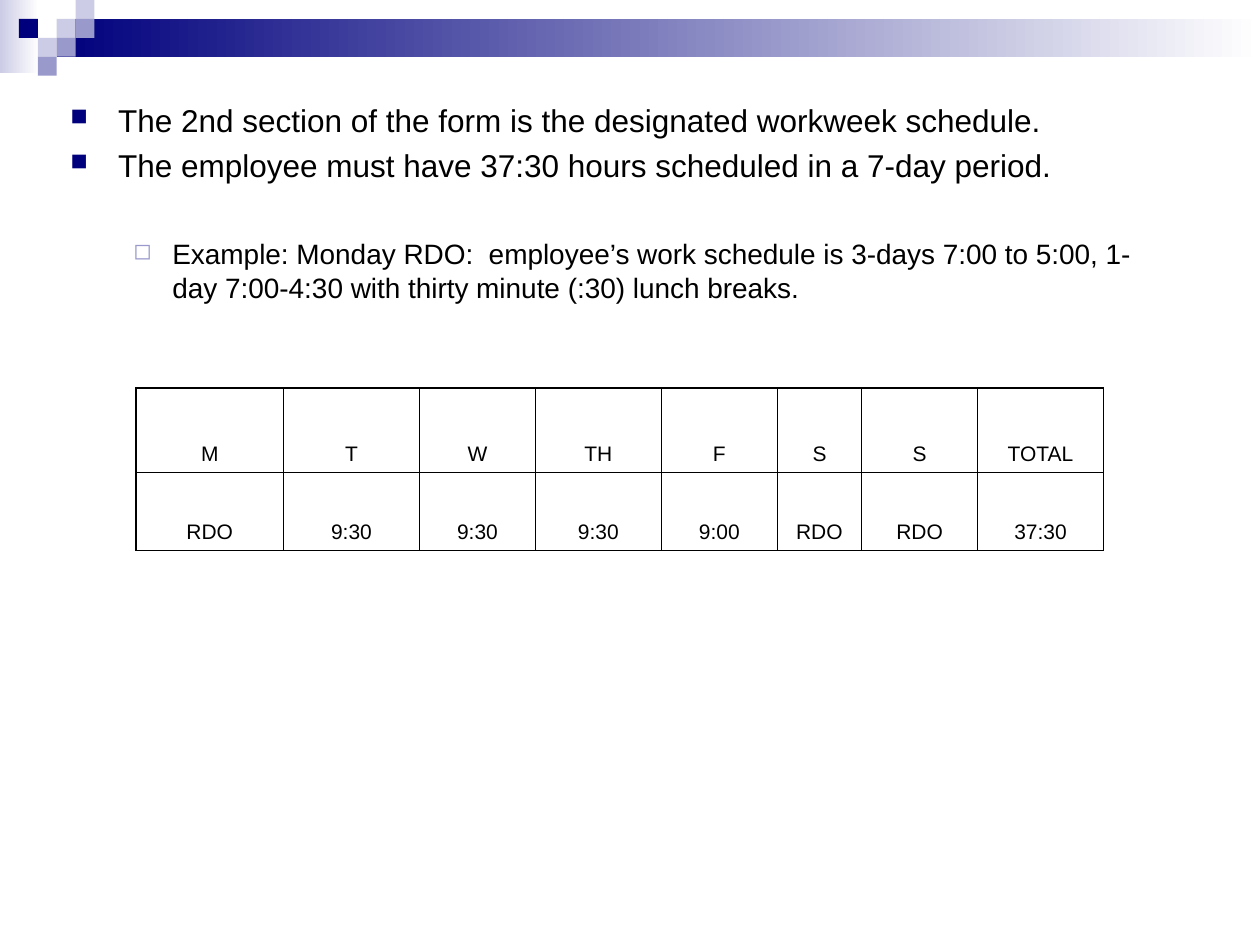
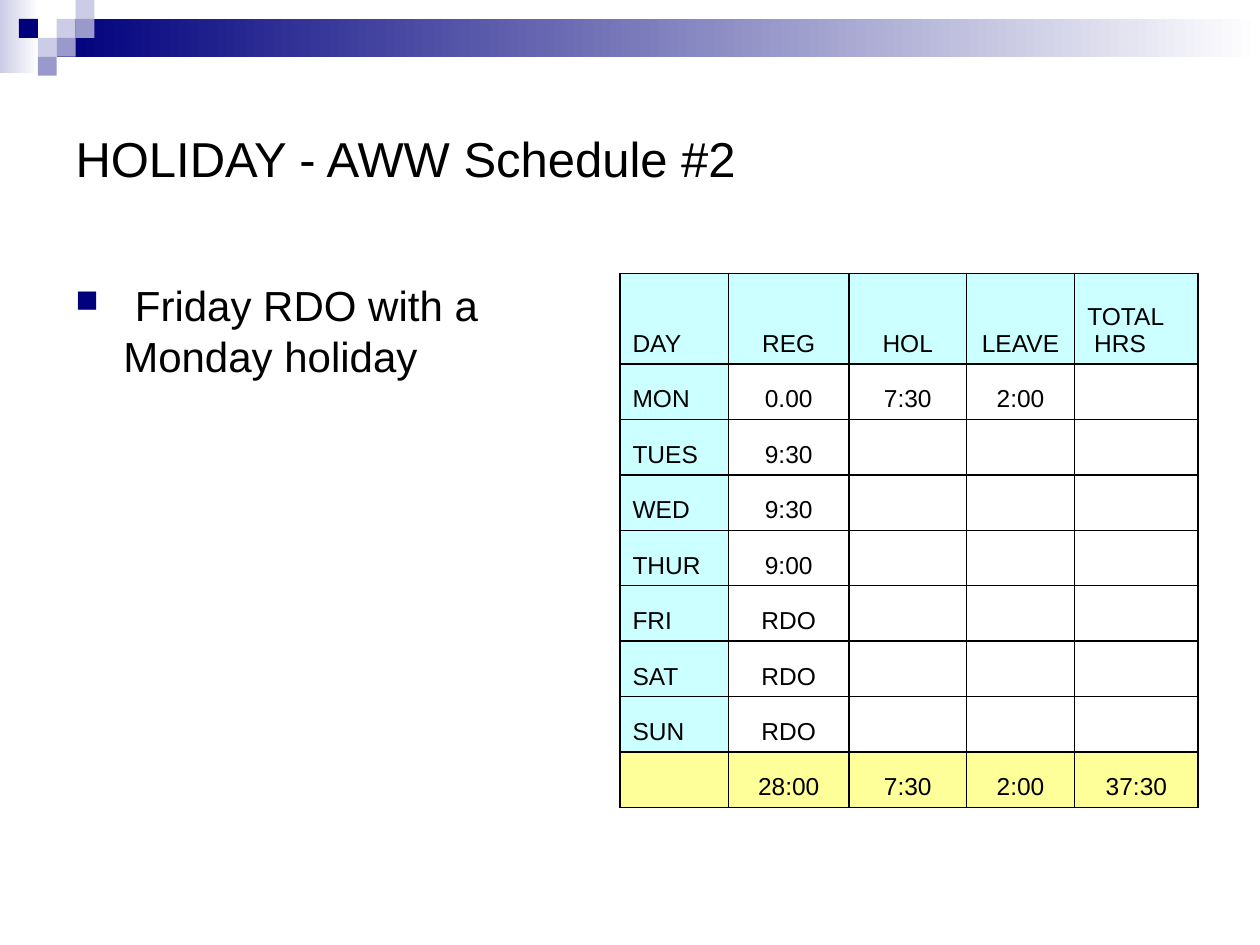
from lxml.etree import SubElement
from pptx import Presentation
from pptx.dml.color import RGBColor
from pptx.enum.shapes import MSO_SHAPE
from pptx.enum.text import MSO_ANCHOR, MSO_AUTO_SIZE, PP_ALIGN
from pptx.oxml.ns import qn
from pptx.util import Inches, Pt

NAVY, LILAC, PALE, WHITE, BLACK = "00007D", "9999CC", "CCCCE6", "FFFFFF", "000000"
CYAN, YELLOW = "CCFFFF", "FFFF99"
UNIT = 0.15
TILES = [(3, 1, PALE), (4, 0, PALE), (4, 1, LILAC), (2, 2, PALE),
         (1, 1, NAVY), (3, 2, LILAC), (2, 3, LILAC)]
BULLETS = {
    0: {"char": "■", "color": NAVY, "size": 75, "left": 0.38, "hang": 0.38},
    1: {"char": "◻", "color": LILAC, "size": 80, "left": 0.81, "hang": 0.31},
}
FRAME = {"word_wrap": True, "auto_size": MSO_AUTO_SIZE.NONE}


def rgb(code):
    """Turn a hex string into a colour."""
    return RGBColor.from_string(code)


def put(item, values):
    """Set each named value on an item."""
    for name, value in values.items():
        setattr(item, name, value)


class Deck:
    """Holds the shared style and the current slide."""

    def __init__(self):
        """Open an empty deck of 10 by 7.5 inches."""
        self.prs = Presentation()
        put(self.prs, {"slide_width": Inches(10), "slide_height": Inches(7.5)})
        self.slide = None

    def new(self, title=None):
        """Start a slide with the band and, if given, a title."""
        layout = self.prs.slide_layouts[5 if title else 6]
        self.slide = self.prs.slides.add_slide(layout)
        self.block(0, 0, 0.31, 0.58, PALE, WHITE)
        self.block(3 * UNIT, UNIT, 9.55, 2 * UNIT, NAVY, WHITE)
        for col, row, color in TILES:
            self.block(col * UNIT, row * UNIT, UNIT, UNIT, color)
        if title:
            self.head(title)

    def head(self, text):
        """Place and format the title."""
        shape = self.slide.shapes.title
        put(shape, {"left": Inches(0.5), "top": Inches(0.5),
                    "width": Inches(9), "height": Inches(1.5)})
        put(shape.text_frame, FRAME | {"vertical_anchor": MSO_ANCHOR.MIDDLE})
        self.label(shape.text_frame.paragraphs[0], text, 28)

    def block(self, left, top, width, height, color, end=None):
        """Draw a rectangle, plain or fading to an end colour."""
        shape = self.slide.shapes.add_shape(
            MSO_SHAPE.RECTANGLE, Inches(left), Inches(top), Inches(width), Inches(height))
        shape.shadow.inherit = False
        shape.line.fill.background()
        if end:
            shape.fill.gradient()
            shape.fill.gradient_angle = 0
            for stop, code in zip(shape.fill.gradient_stops, (color, end)):
                stop.color.rgb = rgb(code)
        else:
            shape.fill.solid()
            shape.fill.fore_color.rgb = rgb(color)

    def label(self, para, text, size, align=PP_ALIGN.LEFT, before=0):
        """Fill one paragraph with styled text."""
        run = para.add_run()
        run.text = text
        put(para, {"alignment": align, "space_before": Pt(before)})
        put(run.font, {"name": "Arial", "size": Pt(size)})
        run.font.color.rgb = rgb(BLACK)

    def bullet(self, para, level):
        """Give a paragraph the bullet of its level."""
        mark = BULLETS[level]
        para.level = level
        props = para._p.get_or_add_pPr()
        props.set("marL", str(Inches(mark["left"])))
        props.set("indent", str(-Inches(mark["hang"])))
        tint = SubElement(props, qn("a:buClr"))
        SubElement(tint, qn("a:srgbClr"), val=mark["color"])
        SubElement(props, qn("a:buSzPct"), val=str(mark["size"] * 1000))
        SubElement(props, qn("a:buChar"), char=mark["char"])

    def points(self, left, top, width, height, items):
        """Add a bulleted text box from (level, text, size, space) items."""
        box = self.slide.shapes.add_textbox(
            Inches(left), Inches(top), Inches(width), Inches(height))
        frame = box.text_frame
        put(frame, FRAME)
        for place, (level, text, size, before) in enumerate(items):
            para = frame.add_paragraph() if place else frame.paragraphs[0]
            self.label(para, text, size, before=before)
            self.bullet(para, level)

    def edge(self, cell):
        """Draw a thin black line on each side of a cell."""
        props = cell._tc.get_or_add_tcPr()
        for side in "LRTB":
            line = SubElement(props, qn(f"a:ln{side}"), w=str(Pt(1)))
            fill = SubElement(line, qn("a:solidFill"))
            SubElement(fill, qn("a:srgbClr"), val=BLACK)

    def grid(self, left, top, cols, rows, data, size, look):
        """Add a table; look gives the fill and alignment of a cell."""
        table = self.slide.shapes.add_table(
            len(rows), len(cols), Inches(left), Inches(top),
            Inches(sum(cols)), Inches(sum(rows))).table
        put(table, {"first_row": False, "horz_banding": False})
        for col, width in zip(table.columns, cols):
            col.width = Inches(width)
        for row, height in zip(table.rows, rows):
            row.height = Inches(height)
        for r, texts in enumerate(data):
            for c, text in enumerate(texts):
                cell = table.cell(r, c)
                color, align = look(r, c)
                self.edge(cell)
                cell.vertical_anchor = MSO_ANCHOR.BOTTOM
                if color:
                    cell.fill.solid()
                    cell.fill.fore_color.rgb = rgb(color)
                else:
                    cell.fill.background()
                frame = cell.text_frame
                for n, line in enumerate(text.split("\n") if text else []):
                    para = frame.add_paragraph() if n else frame.paragraphs[0]
                    self.label(para, line, size, align)


def week(deck):
    """Build the workweek schedule slide."""
    deck.new()
    deck.points(0.46, 0.75, 8.92, 2.08, [
        (0, "The 2nd section of the form is the designated workweek schedule.", 18, 4.4),
        (0, "The employee must have 37:30 hours scheduled in a 7-day period.", 18, 4.4),
        (1, "Example: Monday RDO:  employee’s work schedule is 3-days 7:00 to 5:00, "
            "1-day 7:00-4:30 with thirty minute (:30) lunch breaks.", 16, 30),
    ])
    data = [["M", "T", "W", "TH", "F", "S", "S", "TOTAL"],
            ["RDO", "9:30", "9:30", "9:30", "9:00", "RDO", "RDO", "37:30"]]
    deck.grid(1.08, 3.08, [1.17, 1.08, 0.92, 1, 0.92, 0.67, 0.92, 1], [0.67, 0.62],
              data, 12, lambda r, c: (None, PP_ALIGN.CENTER))


def holiday(deck):
    """Build the holiday schedule slide."""
    deck.new("HOLIDAY - AWW Schedule #2")
    deck.points(0.5, 2.17, 4.42, 0.92,
                [(0, " Friday RDO with a Monday holiday", 24, 5.8)])
    hours = {"TUES": "9:30", "WED": "9:30", "THUR": "9:00",
             "FRI": "RDO", "SAT": "RDO", "SUN": "RDO"}
    data = [["DAY", "REG", "HOL", "LEAVE", "TOTAL\n HRS"],
            ["MON", "0.00", "7:30", "2:00", ""],
            *([day, reg, "", "", ""] for day, reg in hours.items()),
            ["", "28:00", "7:30", "2:00", "37:30"]]
    last = len(data) - 1

    def look(r, c):
        """Choose the fill and alignment of a cell."""
        color = YELLOW if r == last else CYAN if r == 0 or c == 0 else None
        left = c == 0 or (r, c) == (0, 4)
        return color, PP_ALIGN.LEFT if left else PP_ALIGN.CENTER

    deck.grid(4.92, 2.17, [0.86, 0.96, 0.93, 0.86, 0.98], [0.72] + [0.44] * last,
              data, 14, look)


def main():
    """Build and save the deck."""
    deck = Deck()
    week(deck)
    holiday(deck)
    deck.prs.save("out.pptx")


if __name__ == "__main__":
    main()
